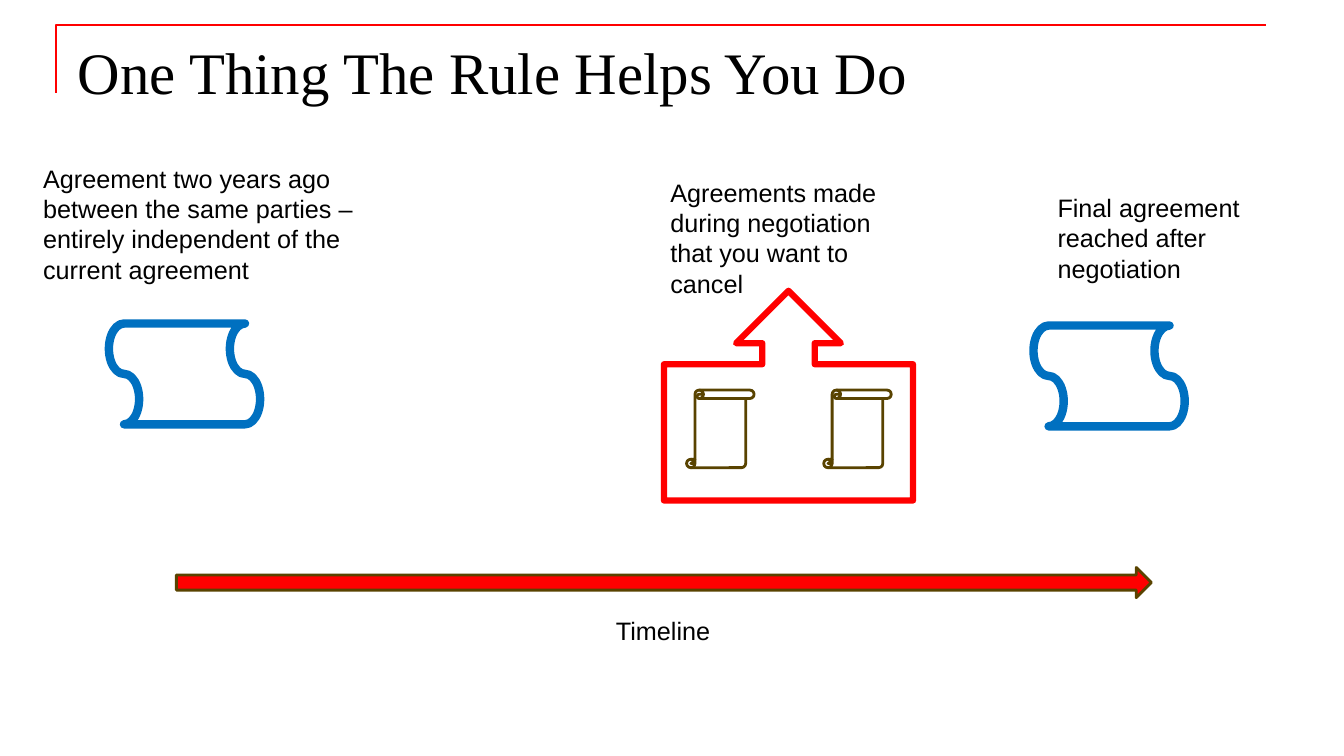
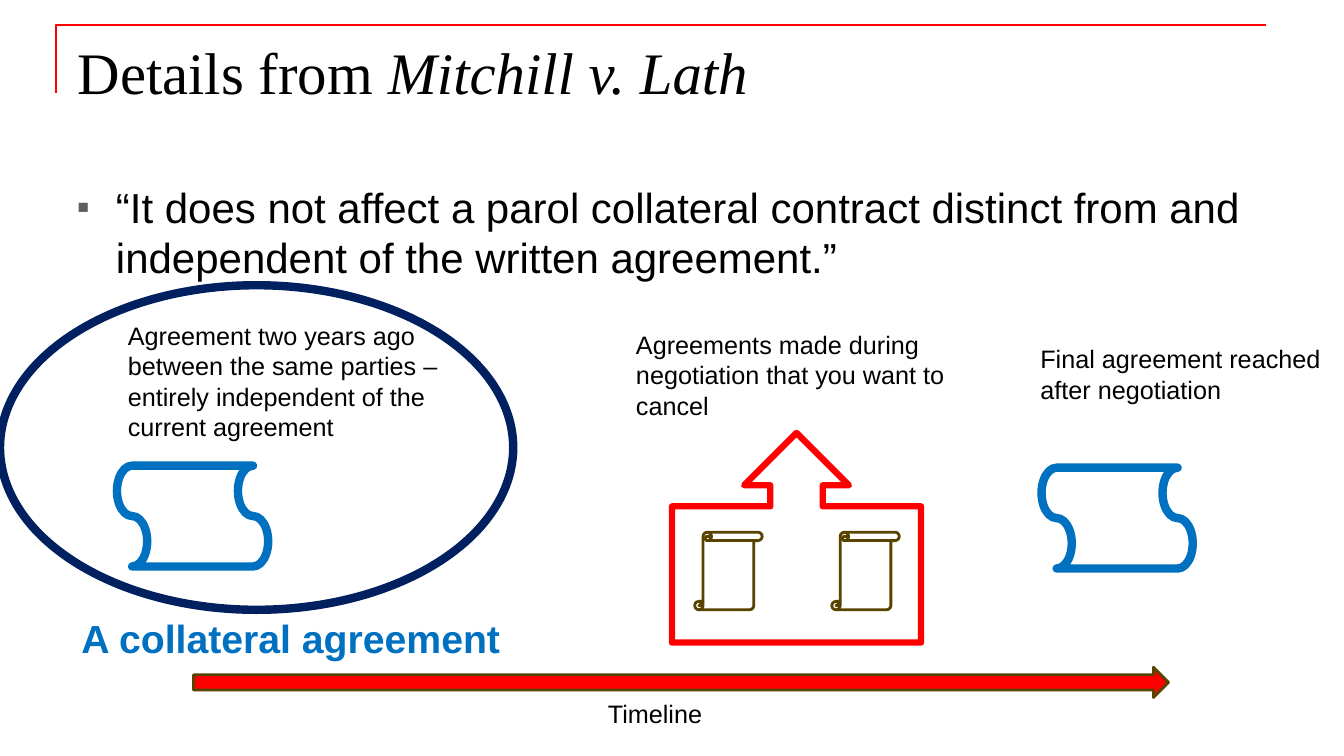
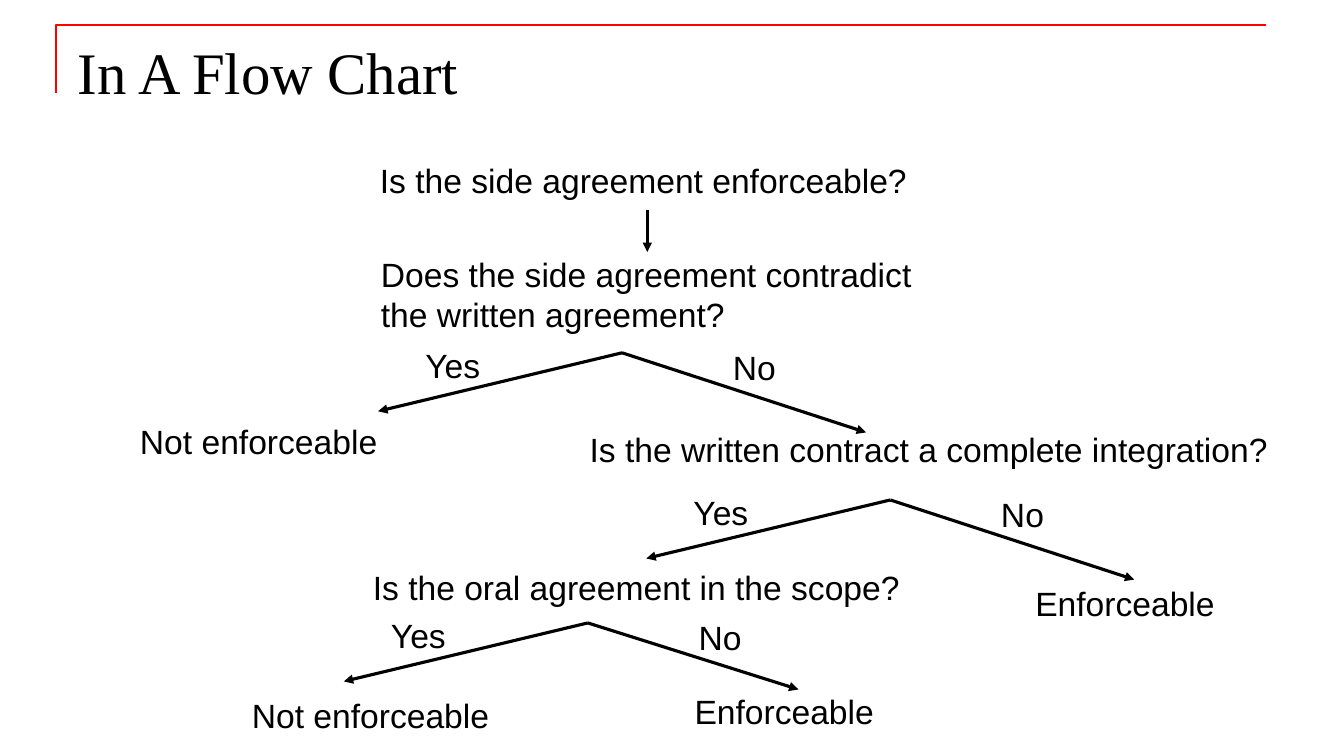
from lxml import etree
from pptx import Presentation
from pptx import util as u
from pptx.dml.color import RGBColor
from pptx.enum import shapes, text
from pptx.oxml.ns import qn

HUES = {"ink": "000000", "red": "FF0000", "blue": "0070C0",
        "navy": "002060", "brown": "594300", "gray": "5F5F5F"}
KIND = shapes.MSO_SHAPE


def write(frame, words, size, hue="ink", face="Arial", bold=False):
    frame.word_wrap = True
    frame.vertical_anchor = text.MSO_ANCHOR.TOP
    para = frame.paragraphs[0]
    para.alignment = text.PP_ALIGN.LEFT
    for part in words.split("|"):
        run = para.add_run()
        run.text = part
        run.font.name = face
        run.font.size = u.Pt(size)
        run.font.bold = bold
        run.font.color.rgb = RGBColor.from_string(HUES[hue])
    return para


def draw(slide, kind, at, hue, width, fill=None, turn=0):
    shape = slide.shapes.add_shape(kind, *map(u.Inches, at))
    shape.shadow.inherit = False
    shape.rotation = turn
    shape.line.color.rgb = RGBColor.from_string(HUES[hue])
    shape.line.width = u.Pt(width)
    if fill:
        shape.fill.solid()
        shape.fill.fore_color.rgb = RGBColor.from_string(HUES[fill])
    else:
        shape.fill.background()


prs = Presentation()
prs.slide_width, prs.slide_height = u.Inches(13.33), u.Inches(7.5)

heads = [("One Thing The Rule Helps You Do", 5),
         ("Details from |Mitchill v. Lath", 1),
         ("In A Flow Chart", 5)]
slides = []
for head, form in heads:
    slide = prs.slides.add_slide(prs.slide_layouts[form])
    pen = slide.shapes.build_freeform(u.Inches(0.56), u.Inches(0.92))
    pen.add_line_segments([(u.Inches(0.56), u.Inches(0.25)),
                           (u.Inches(12.56), u.Inches(0.25))], close=False)
    rule = pen.convert_to_shape()
    rule.shadow.inherit = False
    rule.fill.background()
    rule.line.color.rgb = RGBColor.from_string(HUES["red"])
    rule.line.width = u.Pt(1.5)
    title = slide.shapes.title
    title.left, title.top, title.width, title.height = map(u.Inches, (0.67, 0.3, 12, 1.25))
    title.text_frame.auto_size = text.MSO_AUTO_SIZE.NONE
    para = write(title.text_frame, head, 42, face="Times New Roman")
    for run in para.runs[1:]:
        run.font.italic = True
    slides.append(slide)
first, second, chart = slides

body = second.placeholders[1]
body.left, body.top, body.width, body.height = map(u.Inches, (0.67, 1.75, 12, 4.95))
body.text_frame.auto_size = text.MSO_AUTO_SIZE.NONE
para = write(body.text_frame, "“It does not affect a parol collateral contract distinct from and "
             "independent of the written agreement.”", 30)
para.space_before = u.Pt(6)
props = para._p.get_or_add_pPr()
props.set("marL", str(u.Inches(0.38)))
props.set("indent", str(u.Inches(-0.38)))
tint = etree.SubElement(props, qn("a:buClr"))
etree.SubElement(tint, qn("a:srgbClr"), val=HUES["gray"])
etree.SubElement(props, qn("a:buSzPct"), val="45000")
etree.SubElement(props, qn("a:buFont"), typeface="Arial")
etree.SubElement(props, qn("a:buChar"), char="■")

notes = ["Agreement two years ago between the same parties – "
         "entirely independent of the current agreement",
         "Final agreement reached after negotiation",
         "Agreements made during negotiation that you want to cancel",
         "Timeline"]
scenes = [
    (first, 0, 0, (1.75, 5.63),
     [(0.33, 1.57, 3.37, 1.31), (10.39, 1.86, 2.58, 1.01),
      (6.55, 1.71, 2.58, 1.31), (6.01, 6.06, 2.58, 0.4)]),
    (second, 0.08, 1.41, (1.92, 6.62),
     [(1.17, 3.13, 3.4, 1.31), (10.22, 3.36, 3.11, 0.71),
      (6.21, 3.22, 3.37, 1.01), (5.93, 6.88, 2.58, 0.4)]),
]
for slide, dx, dy, start, spots in scenes:
    for x, y in [(10.5, 2.98), (1.33, 2.96)]:
        draw(slide, KIND.FLOWCHART_PUNCHED_TAPE, (x + dx, y + dy, 1, 1.5), "blue", 6, turn=90)
    draw(slide, KIND.RIGHT_ARROW, (*start, 9.67, 0.3), "brown", 2, "red")
    for x in (6.81, 8.17):
        draw(slide, KIND.VERTICAL_SCROLL, (x + dx, 3.87 + dy, 0.67, 0.77), "brown", 2)
    draw(slide, KIND.LEFT_ARROW_CALLOUT, (6.78 + dx, 2.69 + dy, 2.08, 2.47), "red", 4.5, turn=90)
    for note, spot in zip(notes, spots):
        box = slide.shapes.add_textbox(*map(u.Inches, spot))
        write(box.text_frame, note, 18)

draw(second, KIND.OVAL, (0, 2.83, 5.09, 3.22), "navy", 6)
box = second.shapes.add_textbox(*map(u.Inches, (0.71, 6.05, 4.85, 0.57)))
write(box.text_frame, "A collateral agreement", 28, "blue", bold=True)

steps = [
    ("Is the side agreement enforceable?", 3.67, 1.54, 6, 0.5),
    ("Does the side agreement contradict the written agreement?", 3.68, 2.47, 6, 0.91),
    ("Not enforceable", 1.29, 4.13, 2.83, 0.5),
    ("Is the written contract a complete integration?", 5.75, 4.21, 7.42, 0.5),
    ("Enforceable", 10.17, 5.73, 2.83, 0.5),
    ("Is the oral agreement in the scope?", 3.6, 5.58, 5.83, 0.5),
    ("Enforceable", 6.79, 6.81, 2.83, 0.5),
    ("Not enforceable", 2.4, 6.84, 2.83, 0.5),
]
lines = [(6.42, 2.08, 6.42, 2.5)]
forks = [(6.17, 3.5, 2.42, 0.79), (8.83, 4.96, 2.42, 0.79), (5.83, 6.18, 2.09, 0.66)]
for x, y, run, drop in forks:
    lines += [(x, y, x - 2.42, y + 0.58), (x, y, x + run, y + drop)]
    steps += [("Yes", x - 2.05, y - 0.13, 0.83, 0.5), ("No", x + 1, y - 0.11, 0.83, 0.5)]

for ends in lines:
    line = chart.shapes.add_connector(shapes.MSO_CONNECTOR.STRAIGHT, *map(u.Inches, ends))
    line.line.color.rgb = RGBColor.from_string(HUES["ink"])
    line.line.width = u.Pt(2.25)
    etree.SubElement(line.line._get_or_add_ln(), qn("a:tailEnd"), type="triangle")
    etree.SubElement(line._element.spPr, qn("a:effectLst"))
for words, *spot in steps:
    box = chart.shapes.add_textbox(*map(u.Inches, spot))
    write(box.text_frame, words, 24)

prs.save("out.pptx")
